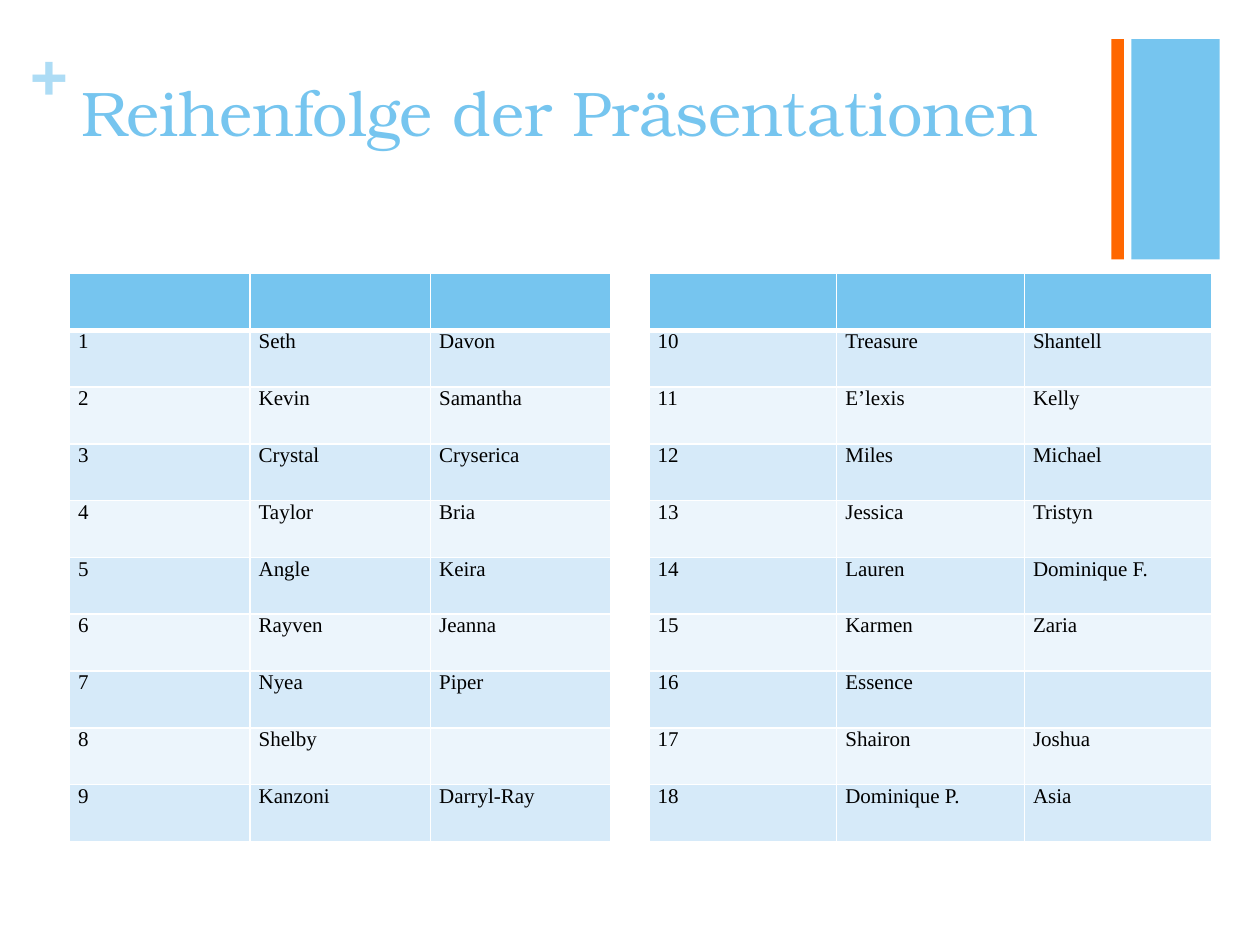
from pptx import Presentation
from pptx.dml.color import RGBColor
from pptx.enum.shapes import MSO_SHAPE as Shape
from pptx.enum.text import MSO_ANCHOR as Anchor, PP_ALIGN as Align
from pptx.oxml import parse_xml
from pptx.oxml.ns import nsdecls
from pptx.util import Inches, Pt

BLUE, ORANGE, PALE_BLUE = "76C5EF", "FF6700", "ADDCF5"
ROW_FILLS = ["D6EAF9", "ECF5FC"]
HEADING_FONT, TABLE_FONT = "TeX Gyre Bonum", "Times New Roman"


def add_run(paragraph, text, font, size, color, bold=False):
    run = paragraph.add_run()
    run.text = text
    run.font.name = font
    run.font.size = Pt(size)
    run.font.bold = bold
    run.font.color.rgb = RGBColor.from_string(color)


def set_white_borders(cell, bottom_width):
    """Put white lines around a cell, 1 pt wide except at the bottom."""
    properties = cell._tc.get_or_add_tcPr()
    widths = {"lnL": 1, "lnR": 1, "lnT": 1, "lnB": bottom_width}
    for position, (side, width) in enumerate(widths.items()):
        properties.insert(position, parse_xml(
            f'<a:{side} {nsdecls("a")} w="{Pt(width)}"><a:solidFill>'
            f'<a:srgbClr val="FFFFFF"/></a:solidFill></a:{side}>'))


prs = Presentation()
prs.slide_width, prs.slide_height = Inches(10), Inches(7.5)
slide = prs.slides.add_slide(prs.slide_layouts[5])

# Corner decoration
for left, width, color in [(8.98, 0.7, BLUE), (8.82, 0.1, ORANGE)]:
    bar = slide.shapes.add_shape(
        Shape.RECTANGLE, Inches(left), Inches(0.31), Inches(width), Inches(1.75))
    bar.shadow.inherit = False
    bar.fill.solid()
    bar.fill.fore_color.rgb = RGBColor.from_string(color)
    bar.line.fill.background()

plus = slide.shapes.add_textbox(
    Inches(0.24), Inches(0.25), Inches(0.29), Inches(0.61)).text_frame
plus.margin_left = plus.margin_right = plus.margin_top = plus.margin_bottom = 0
add_run(plus.paragraphs[0], "+", HEADING_FONT, 36, PALE_BLUE, bold=True)

# Title
title = slide.shapes.title
title.left, title.top = Inches(0.55), Inches(0.53)
title.width, title.height = Inches(8.26), Inches(1.22)
title.text_frame.vertical_anchor = Anchor.TOP
heading = title.text_frame.paragraphs[0]
heading.alignment = Align.LEFT
add_run(heading, "Reihenfolge der Präsentationen", HEADING_FONT, 36, BLUE)

# Presentation order: pairs are numbered through both tables
late_pairs = [
    ("Treasure", "Shantell"), ("E’lexis", "Kelly"), ("Miles", "Michael"),
    ("Jessica", "Tristyn"), ("Lauren", "Dominique F."), ("Karmen", "Zaria"),
    ("Essence", ""), ("Shairon", "Joshua"), ("Dominique P.", "Asia"),
]
early_pairs = [
    ("Seth", "Davon"), ("Kevin", "Samantha"), ("Crystal", "Cryserica"),
    ("Taylor", "Bria"), ("Angle", "Keira"), ("Rayven", "Jeanna"),
    ("Nyea", "Piper"), ("Shelby", ""), ("Kanzoni", "Darryl-Ray"),
]

for left, width, first_number, pairs in [
        (5.15, 4.47, 10, late_pairs), (0.55, 4.3, 1, early_pairs)]:
    rows = [("", "", "")]
    rows += [(str(number), *pair) for number, pair in enumerate(pairs, first_number)]
    order = slide.shapes.add_table(
        len(rows), 3, Inches(left), Inches(2.17), Inches(width), Inches(4.51)).table
    for r, row in enumerate(rows):
        for c, text in enumerate(row):
            cell = order.cell(r, c)
            cell.fill.solid()
            fill = ROW_FILLS[(r - 1) % 2] if r else BLUE
            cell.fill.fore_color.rgb = RGBColor.from_string(fill)
            set_white_borders(cell, 1 if r else 3)
            if text:
                cell.margin_left = cell.margin_right = Inches(0.07)
                cell.margin_top = cell.margin_bottom = 0
                add_run(cell.text_frame.paragraphs[0], text, TABLE_FONT, 12, "000000")

prs.save("out.pptx")
